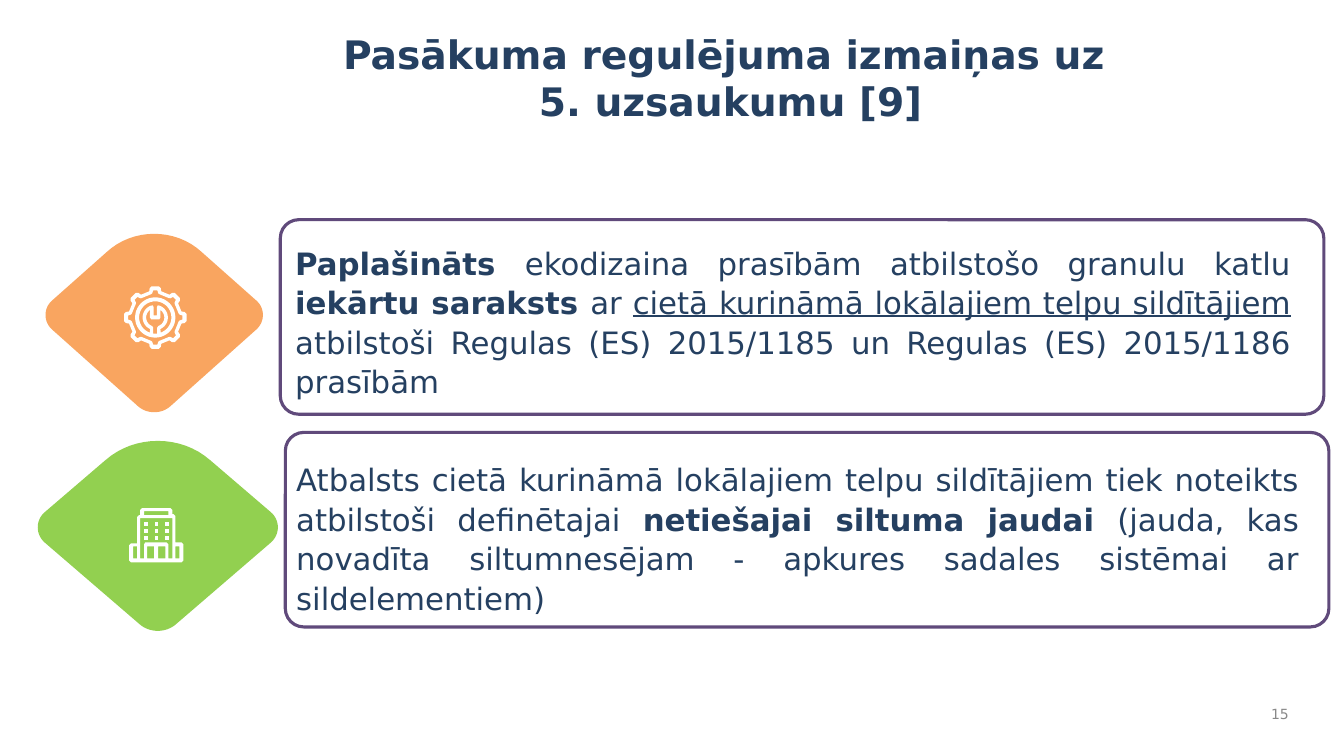
from math import cos, radians, sin

from pptx import Presentation, util as u
from pptx.dml.color import RGBColor
from pptx.enum import shapes, text

CELL = u.Inches(0.01)  # the page is a grid of 1333 by 750 cells
COLUMNS, ROWS = 1333, 750
FONT = "DejaVu Sans"
NAVY, PURPLE, WHITE = "254061", "604A7B", "FFFFFF"


def color(value):
    return RGBColor.from_string(value)


def inside(box, left, top, width, height):
    """Box of the given cells, measured from the corner of another box."""
    return box[0] + left, box[1] + top, width, height


def emu(box):
    return [round(length * CELL) for length in box]


def add_text(page, box, paragraphs, size, align, fill=NAVY, bold=None,
             anchor=text.MSO_ANCHOR.TOP):
    """Each paragraph is a list of (wording, style) with style "", "b" or "u"."""
    frame = page.shapes.add_textbox(*emu(box)).text_frame
    frame.word_wrap = True
    frame.vertical_anchor = anchor
    for index, spans in enumerate(paragraphs):
        para = frame.add_paragraph() if index else frame.paragraphs[0]
        para.alignment = align
        para.font.name, para.font.size = FONT, u.Pt(size)
        para.font.color.rgb, para.font.bold = color(fill), bold
        for wording, style in spans:
            span = para.add_run()
            span.text = wording
            if style == "b":
                span.font.bold = True
            elif style == "u":
                span.font.underline = True
    return frame


def trace(group, box, grid, contours, fill):
    """Filled outline; contour points count in cells of a grid over the box."""
    left, top, width, height = emu(box)
    scaled = [[(round(left + x * width / grid), round(top + y * height / grid))
               for x, y in contour] for contour in contours]
    builder = group.shapes.build_freeform(*scaled[0][0])
    for index, points in enumerate(scaled):
        if index:
            builder.move_to(*points[0])
        builder.add_line_segments(points[1:], close=True)
    outline = builder.convert_to_shape()
    outline.shadow.inherit = False
    outline.fill.solid()
    outline.fill.fore_color.rgb = color(fill)
    outline.line.fill.background()


def curve(a, b, c, d, steps=16):
    """Points along a cubic curve."""
    return [tuple((1 - t) ** 3 * a[i] + 3 * (1 - t) ** 2 * t * b[i]
                  + 3 * (1 - t) * t ** 2 * c[i] + t ** 3 * d[i] for i in (0, 1))
            for t in (step / steps for step in range(steps + 1))]


def arc(radius, start, end, center=31, steps=40):
    """Points of an arc, in degrees clockwise from the top."""
    angles = [radians(start + (end - start) * step / steps)
              for step in range(steps + 1)]
    return [(center + radius * sin(a), center - radius * cos(a)) for a in angles]


def rectangle(left, top, right, bottom):
    return [(left, top), (right, top), (right, bottom), (left, bottom)]


def draw_badge(group, box, fill):
    corners = [
        [(4, 54.6), (0, 50.5), (0, 43), (4, 39)],
        [(28.6, 13), (40.5, 0), (59.5, 0), (71.4, 13)],
        [(96, 39), (100, 43), (100, 50.5), (96, 54.6)],
        [(57.3, 95.7), (53.2, 100), (46.8, 100), (42.7, 95.7)],
    ]
    outline = [point for corner in corners for point in curve(*corner)]
    trace(group, box, 100, [outline], fill)


def cog(tooth, teeth=8, center=31):
    """Tooth profile (sideways, outwards) repeated around the center."""
    points = []
    for index in range(teeth):
        a = radians(360 * index / teeth)
        points += [(center + x * cos(a) + r * sin(a),
                    center + x * sin(a) - r * cos(a)) for x, r in tooth]
    return points


def draw_gear(group, box):
    outer = [(-6, 26), (-5.5, 29), (-3.5, 31), (3.5, 31), (5.5, 29), (6, 26)]
    inner = [(-4, 23.2), (-3, 24), (-2, 27), (2, 27), (3, 24), (4, 23.2)]
    trace(group, box, 62, [cog(outer), cog(inner)], WHITE)

    gap = (arc(16, -160, 160) + arc(12.5, 156, 20)
           + [(33.5, 19), (32.5, 21), (32.5, 29), (29.5, 29), (29.5, 21), (28.5, 19)]
           + arc(12.5, -20, -156))
    wrench = (arc(9, 35, 160) + [(33, 41), (33, 47), (29, 47), (29, 41)]
              + arc(9, -160, -35)
              + [(25.8, 31), (27, 33), (35, 33), (36.2, 31)])
    trace(group, inside(box, 0, 0, 62, 62), 62, [arc(20, 0, 360), gap, wrench], WHITE)


def draw_building(group, box):
    walls = [(13, 0), (41, 0), (43, 2), (43, 6), (44, 6), (46, 8), (46, 34),
             (52, 34), (54, 36), (54, 52), (52, 54), (2, 54), (0, 52), (0, 37),
             (2, 35), (8, 35), (8, 9), (10, 7), (11, 7), (11, 2)]
    interior = [(43, 10), (43, 50), (39, 50), (39, 36), (37, 34), (16, 34),
                (15, 36), (15, 50), (11, 50), (11, 10)]
    openings = [rectangle(15, 3, 39, 7)]
    openings += [rectangle(left, 38, right, 50)
                 for left, right in ((4, 8), (18, 25), (29, 36), (46, 50))]
    trace(group, box, 54, [walls, interior] + openings, WHITE)
    for row in range(3):
        for column in range(3):
            x, y = 15 + 10.5 * column, 14 + 7 * row
            trace(group, box, 54, [rectangle(x, y, x + 3.5, y + 3.5)], WHITE)


def draw_change(page, box, badge, fill, draw_icon, icon, wording_box, spans):
    """Framed statement with its badge; parts are measured from the frame."""
    frame = add_text(page, inside(box, *wording_box), [spans], 22,
                     text.PP_ALIGN.JUSTIFY)
    frame.paragraphs[0].line_spacing = 1.07
    frame.paragraphs[0].space_after = u.Pt(6)

    group = page.shapes.add_group_shape()
    draw_badge(group, inside(box, *badge), fill)
    draw_icon(group, inside(box, *icon))

    border = page.shapes.add_shape(shapes.MSO_SHAPE.ROUNDED_RECTANGLE, *emu(box))
    border.adjustments[0] = 0.095
    border.shadow.inherit = False
    border.fill.background()
    border.line.color.rgb = color(PURPLE)
    border.line.width = u.Pt(2.25)


def main():
    deck = Presentation()
    deck.slide_width, deck.slide_height = COLUMNS * CELL, ROWS * CELL
    page = deck.slides.add_slide(deck.slide_layouts[6])

    add_text(page, (1244, 692, 44, 33), [[("15", "")]], 10, text.PP_ALIGN.RIGHT,
             fill="898989", anchor=text.MSO_ANCHOR.MIDDLE)
    add_text(page, (193, 25, 1063, 104),
             [[("Pasākuma regulējuma izmaiņas uz ", "")], [("5. uzsaukumu [9]", "")]],
             28, text.PP_ALIGN.CENTER, bold=True)

    draw_change(page, (278, 218, 1035, 193), (-235, 8, 220, 185), "F9A560",
                draw_gear, (-155, 66, 62, 62), (5, 17, 1007, 181), [
                    ("Paplašināts ", "b"),
                    ("ekodizaina prasībām atbilstošo granulu katlu ", ""),
                    ("iekārtu saraksts ", "b"),
                    ("ar ", ""),
                    ("cietā kurināmā lokālajiem telpu sildītājiem", "u"),
                    (" atbilstoši Regulas (ES) 2015/1185 un Regulas (ES) "
                     "2015/1186 prasībām", "")])
    draw_change(page, (283, 429, 1035, 193), (-248, 2, 243, 197), "92D050",
                draw_building, (-155, 75, 54, 54), (1, 21, 1014, 181), [
                    ("Atbalsts cietā kurināmā lokālajiem telpu sildītājiem tiek "
                     "noteikts atbilstoši definētajai ", ""),
                    ("netiešajai siltuma jaudai ", "b"),
                    ("(jauda, kas novadīta siltumnesējam - apkures sadales "
                     "sistēmai ar sildelementiem)", "")])
    deck.save("out.pptx")


if __name__ == "__main__":
    main()
